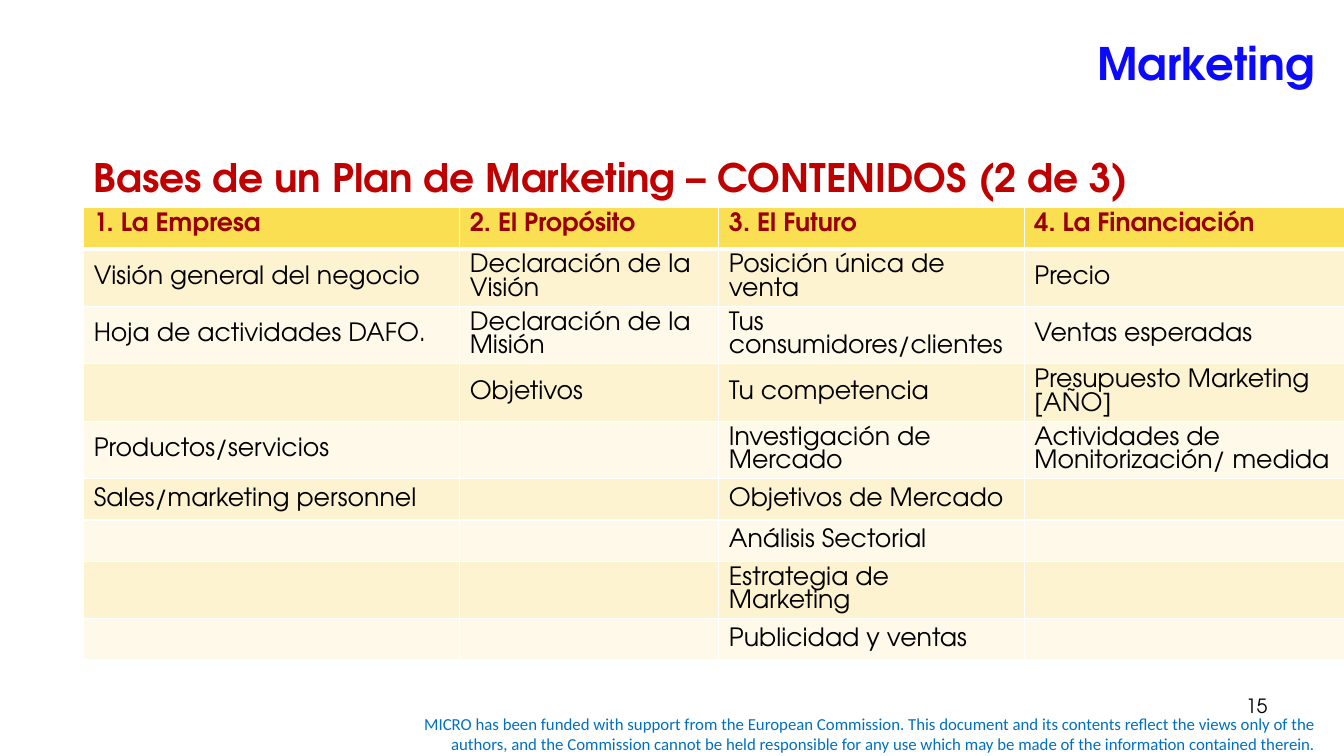
import pptx
import pptx.util
import pptx.dml.color
import pptx.enum.text
import lxml.etree
from dataclasses import dataclass

Inches = pptx.util.Inches
Pt = pptx.util.Pt
Align = pptx.enum.text.PP_ALIGN
Anchor = pptx.enum.text.MSO_ANCHOR


@dataclass(frozen=True)
class Theme:
    font: str = "TeX Gyre Adventor"
    plain: str = "Calibri"
    blue: str = "0B0AFD"
    red: str = "C00000"
    wine: str = "990000"
    sky: str = "0070C0"
    black: str = "000000"
    white: str = "FFFFFF"
    gold: str = "FBDF53"
    bands: tuple = ("FDF3D1", "FEF9E9")
    title: int = 32
    head: int = 28
    body: int = 18
    page: int = 14
    foot: int = 12
    lead: float = 16.7


THEME = Theme()
COLS = (3.73, 2.57, 3.03, 3.35)
LOW, HIGH = 0.41, 0.57
ROWS = (
    (LOW, "1. La Empresa", "2. El Propósito", "3. El Futuro", "4. La Financiación"),
    (HIGH, "Visión general del negocio", "Declaración de la Visión",
     "Posición única de venta", "Precio"),
    (HIGH, "Hoja de actividades DAFO.", "Declaración de la Misión",
     "Tus consumidores/clientes", "Ventas esperadas"),
    (HIGH, "", "Objetivos", "Tu competencia", "Presupuesto Marketing [AÑO]"),
    (HIGH, "Productos/servicios", "", "Investigación de Mercado",
     "Actividades de Monitorización/ medida"),
    (LOW, "Sales/marketing personnel", "", "Objetivos de Mercado", ""),
    (LOW, "", "", "Análisis Sectorial", ""),
    (HIGH, "", "", "Estrategia de Marketing", ""),
    (LOW, "", "", "Publicidad y ventas", ""),
)


def color(code):
    return pptx.dml.color.RGBColor.from_string(code)


def write(frame, text, size, tint=THEME.black, font=THEME.font, bold=False,
          align=Align.LEFT, lead=None):
    para = frame.paragraphs[0]
    para.alignment = align
    if lead:
        para.line_spacing = Pt(lead)
    run = para.add_run()
    run.text = text
    run.font.name = font
    run.font.size = Pt(size)
    run.font.bold = bold
    run.font.color.rgb = color(tint)


def label(slide, box, text, size, anchor=Anchor.TOP, **style):
    frame = slide.shapes.add_textbox(*map(Inches, box)).text_frame
    frame.word_wrap = True
    frame.vertical_anchor = anchor
    write(frame, text, size, **style)


def border(cell, side, width):
    props = cell._tc.get_or_add_tcPr()
    line = lxml.etree.SubElement(
        props, pptx.oxml.ns.qn(f"a:ln{side}"), w=str(Pt(width)))
    fill = lxml.etree.SubElement(line, pptx.oxml.ns.qn("a:solidFill"))
    lxml.etree.SubElement(fill, pptx.oxml.ns.qn("a:srgbClr"), val=THEME.white)


def paint(cell, row, text):
    top = row == 0
    cell.vertical_anchor = Anchor.TOP if top else Anchor.MIDDLE
    widths = {"L": 1, "R": 1, "T": 3 if row == 1 else 1, "B": 3 if top else 1}
    for side, width in widths.items():
        border(cell, side, width)
    cell.fill.solid()
    cell.fill.fore_color.rgb = color(THEME.gold if top else THEME.bands[(row - 1) % 2])
    if text:
        write(cell.text_frame, text, THEME.body, bold=top, lead=THEME.lead,
              tint=THEME.wine if top else THEME.black)


def grid(slide, left, top):
    size = (sum(COLS), sum(row[0] for row in ROWS))
    table = slide.shapes.add_table(
        len(ROWS), len(COLS), *map(Inches, (left, top, *size))).table
    for col, width in zip(table.columns, COLS):
        col.width = Inches(width)
    for i, (height, *texts) in enumerate(ROWS):
        table.rows[i].height = Inches(height)
        for j, text in enumerate(texts):
            paint(table.cell(i, j), i, text)


def main():
    deck = pptx.Presentation()
    deck.slide_width, deck.slide_height = Inches(13.33), Inches(7.5)
    slide = deck.slides.add_slide(deck.slide_layouts[6])
    label(slide, (3.75, 7.03, 9.4, 0.5),
          "MICRO has been funded with support from the European Commission. "
          "This document and its contents reflect the views only of the authors, "
          "and the Commission cannot be held responsible for any use which may be "
          "made of the information contained therein.",
          THEME.foot, anchor=Anchor.MIDDLE, tint=THEME.sky, font=THEME.plain,
          align=Align.RIGHT)
    label(slide, (1.14, 0, 12, 1.25), "Marketing", THEME.title,
          anchor=Anchor.MIDDLE, tint=THEME.blue, bold=True, align=Align.RIGHT)
    label(slide, (9.56, 6.83, 3.11, 0.52), "15", THEME.page, align=Align.RIGHT)
    label(slide, (0.83, 1.47, 12, 5.58),
          "Bases de un Plan de Marketing – CONTENIDOS (2 de 3)",
          THEME.head, tint=THEME.red, bold=True)
    grid(slide, 0.83, 2.06)
    deck.save("out.pptx")


if __name__ == "__main__":
    main()
